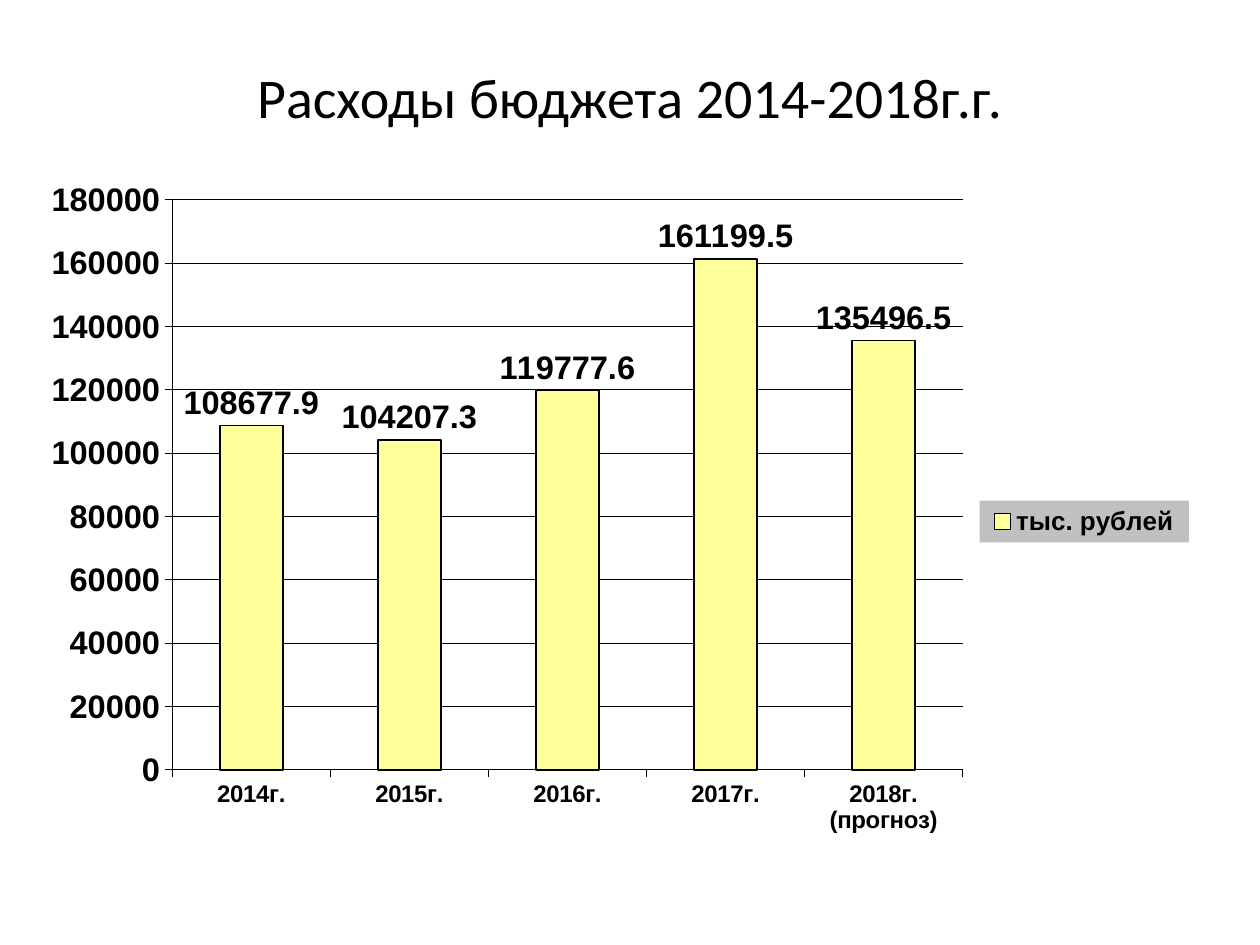
from pptx import Presentation
from pptx.chart.data import CategoryChartData
from pptx.dml.color import RGBColor
from pptx.enum.chart import XL_CHART_TYPE, XL_LABEL_POSITION, XL_LEGEND_POSITION, XL_TICK_MARK
from pptx.enum.text import MSO_ANCHOR, PP_ALIGN
from pptx.oxml import parse_xml
from pptx.oxml.ns import nsdecls, qn
from pptx.util import Inches, Pt

COLUMNS = XL_CHART_TYPE.COLUMN_CLUSTERED
OUTSIDE = XL_TICK_MARK.OUTSIDE

# Content
TITLE = "Расходы бюджета 2014-2018г.г."
SERIES_NAME = "тыс. рублей"
EXPENSES = {
    "2014г.": 108677.9,
    "2015г.": 104207.3,
    "2016г.": 119777.6,
    "2017г.": 161199.5,
    "2018г. (прогноз)": 135496.5,
}
COLORS = {"ink": "000000", "bar": "FFFF99", "legend": "C0C0C0"}

# Shares of the chart's size: left, top, width, height
PLOT_AREA = (0.096, 0.018, 0.699, 0.862)
LEGEND_AREA = (0.81, 0.473, 0.185, 0.063)


def color(name):
    return RGBColor.from_string(COLORS[name])


def style_font(font, size, name="Arial", bold=True):
    font.size, font.name, font.bold = Pt(size), name, bold
    font.color.rgb = color("ink")


def style_line(line, width):
    line.color.rgb = color("ink")
    line.width = Pt(width)


def manual_layout(area, inner=False):
    target = '<c:layoutTarget val="inner"/>' if inner else ""
    modes = "".join(f'<c:{axis}Mode val="edge"/>' for axis in "xy")
    sizes = "".join(f'<c:{side} val="{share}"/>' for side, share in zip("xywh", area))
    return parse_xml(f'<c:layout {nsdecls("c")}><c:manualLayout>{target}{modes}{sizes}'
                     '</c:manualLayout></c:layout>')


deck = Presentation()
deck.slide_width, deck.slide_height = Inches(10), Inches(7.5)
page = deck.slides.add_slide(deck.slide_layouts[5])

# Title
title = page.shapes.title
title.left, title.top, title.width, title.height = map(Inches, (0.5, 0.3, 9, 0.93))
title.text_frame.text = TITLE
title.text_frame.vertical_anchor = MSO_ANCHOR.MIDDLE
para = title.text_frame.paragraphs[0]
para.alignment = PP_ALIGN.CENTER
style_font(para.font, 32, "Calibri", False)

# Column chart
data = CategoryChartData(number_format="General")
data.categories = list(EXPENSES)
data.add_series(SERIES_NAME, list(EXPENSES.values()))
chart = page.shapes.add_chart(COLUMNS, *map(Inches, (0.41, 1.44, 9.07, 5.3)), data).chart
chart.has_title = False
style_font(chart.font, 18.5)

plot = chart.plots[0]
plot.gap_width = 150
plot.vary_by_categories = False
bars = plot.series[0]
bars.format.fill.solid()
bars.format.fill.fore_color.rgb = color("bar")
style_line(bars.format.line, 1)
labels = bars.data_labels
labels.show_value = True
labels.position = XL_LABEL_POSITION.OUTSIDE_END
style_font(labels.font, 18.8)

# Axes
for axis, size in ((chart.category_axis, 13.8), (chart.value_axis, 18.8)):
    style_font(axis.tick_labels.font, size)
    style_line(axis.format.line, 0.25)
    axis.major_tick_mark = OUTSIDE
value_axis = chart.value_axis
value_axis.minimum_scale, value_axis.maximum_scale = 0, 180000
value_axis.major_unit = 20000
style_line(value_axis.major_gridlines.format.line, 0.25)

# Legend
chart.has_legend = True
legend = chart.legend
legend.position = XL_LEGEND_POSITION.RIGHT
legend.include_in_layout = False
style_font(legend.font, 15)

# Manual layouts and the legend's grey background
plot_area = chart.element.find(f'.//{qn("c:plotArea")}')
for part in (plot_area, legend._element):
    for old in part.findall(qn("c:layout")):
        part.remove(old)
plot_area.insert(0, manual_layout(PLOT_AREA, inner=True))
overlay = legend._element.find(qn("c:overlay"))
overlay.addprevious(manual_layout(LEGEND_AREA))
overlay.addnext(parse_xml(
    f'<c:spPr {nsdecls("c", "a")}><a:solidFill><a:srgbClr val="{COLORS["legend"]}"/>'
    '</a:solidFill><a:ln><a:noFill/></a:ln></c:spPr>'))

deck.save("out.pptx")
